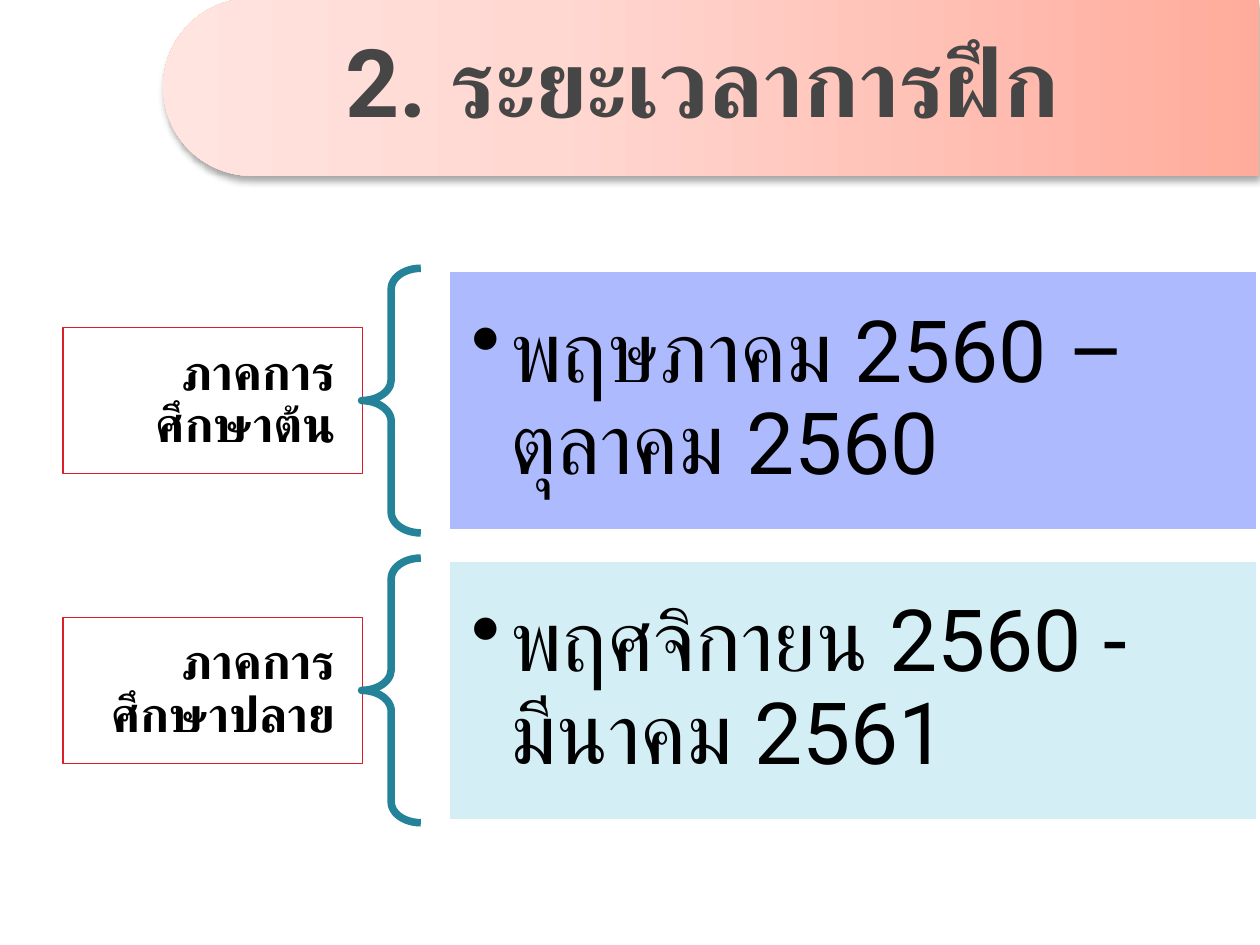
from dataclasses import dataclass

from lxml.etree import SubElement
from pptx import Presentation
from pptx.dml.color import RGBColor
from pptx.enum.shapes import MSO_SHAPE
from pptx.enum.text import MSO_ANCHOR, MSO_AUTO_SIZE, PP_ALIGN
from pptx.oxml import parse_xml
from pptx.oxml.ns import nsdecls, qn
from pptx.util import Inches, Pt


@dataclass(frozen=True)
class Theme:
    font: str = "Roboto"
    title_size: float = 54
    label_size: float = 28
    period_size: float = 49
    thin_line: float = 0.75
    thick_line: float = 4.33
    title: str = "464646"
    text: str = "000000"
    label_line: str = "DA1F28"
    brace: str = "248299"
    period_line: str = "FFFFFF"
    first_term: str = "ADBAFD"
    second_term: str = "D3EEF5"
    banner: tuple = ((0, "FFAC9C"), (65, "FFD8D2"), (100, "FFE4DF"))


class SlideBuilder:
    """Holds the theme and the current page."""

    def __init__(self, page, theme):
        self.page = page
        self.theme = theme

    def shape(self, kind, left, top, width, height, fill=None, line=None, line_width=0.75):
        box = self.page.shapes.add_shape(
            kind, Inches(left), Inches(top), Inches(width), Inches(height))
        box.shadow.inherit = False
        if fill:
            box.fill.solid()
            box.fill.fore_color.rgb = RGBColor.from_string(fill)
        else:
            box.fill.background()
        if line:
            box.line.color.rgb = RGBColor.from_string(line)
            box.line.width = Pt(line_width)
        else:
            box.line.fill.background()
        return box

    def set_text(self, box, text, size, color, bold, align, anchor, insets, bullet=False):
        frame = box.text_frame
        frame.word_wrap = True
        frame.auto_size = MSO_AUTO_SIZE.NONE
        frame.vertical_anchor = anchor
        frame.margin_left = frame.margin_right = Inches(insets[0])
        frame.margin_top = frame.margin_bottom = Inches(insets[1])
        para = frame.paragraphs[0]
        para.text = text
        para.alignment = align
        if bullet:
            settings = para._p.get_or_add_pPr()
            settings.set("marL", str(Inches(0.31)))
            settings.set("indent", str(Inches(-0.31)))
            SubElement(settings, qn("a:buChar")).set("char", "•")
        font = para.font
        font.name = self.theme.font
        font.size = Pt(size)
        font.bold = bold
        font.color.rgb = RGBColor.from_string(color)
        return para

    def banner(self):
        # A tall shape turned on its side, so its rounded end points left
        box = self.shape(MSO_SHAPE.ROUND_2_SAME_RECTANGLE, 4.94, -3.66, 1.41, 8.7)
        box.rotation = 270
        box.adjustments[0] = 0.5
        box.adjustments[1] = 0
        stops = "".join(
            f'<a:gs pos="{position * 1000}"><a:srgbClr val="{color}"/></a:gs>'
            for position, color in self.theme.banner)
        properties = box._element.spPr
        properties.replace(properties.find(qn("a:noFill")), parse_xml(
            f'<a:gradFill {nsdecls("a")} rotWithShape="1"><a:gsLst>{stops}</a:gsLst>'
            '<a:lin ang="16200000" scaled="0"/></a:gradFill>'))
        properties.replace(properties.find(qn("a:effectLst")), parse_xml(
            f'<a:effectLst {nsdecls("a")}><a:outerShdw blurRad="{Pt(4)}" dist="{Pt(3)}" '
            'dir="5400000" rotWithShape="0"><a:srgbClr val="000000">'
            '<a:alpha val="35000"/></a:srgbClr></a:outerShdw></a:effectLst>'))
        # Send behind the title
        self.page.shapes._spTree.insert(2, box._element)

    def title(self, text):
        box = self.page.shapes.title
        box.left, box.top = Inches(2.64), Inches(0.13)
        box.width, box.height = Inches(7.36), Inches(1.1)
        self.set_text(box, text, self.theme.title_size, self.theme.title, True,
                      PP_ALIGN.LEFT, MSO_ANCHOR.TOP, (0.1, 0.05))

    def label(self, text, top):
        box = self.shape(MSO_SHAPE.RECTANGLE, 0.5, top, 2.38, 1.16,
                         line=self.theme.label_line, line_width=self.theme.thin_line)
        para = self.set_text(box, text, self.theme.label_size, self.theme.text, True,
                             PP_ALIGN.RIGHT, MSO_ANCHOR.MIDDLE, (0.22, 0.08))
        para.line_spacing = 0.9

    def brace(self, top, height):
        box = self.shape(MSO_SHAPE.LEFT_BRACE, 2.87, top, 0.47, height,
                         line=self.theme.brace, line_width=self.theme.thick_line)
        box.adjustments[0] = 0.35
        box.adjustments[1] = 0.5

    def period(self, text, top, height, fill):
        box = self.shape(MSO_SHAPE.RECTANGLE, 3.54, top, 6.46, height, fill,
                         self.theme.period_line, self.theme.thick_line)
        para = self.set_text(box, text, self.theme.period_size, self.theme.text, False,
                             PP_ALIGN.LEFT, MSO_ANCHOR.MIDDLE, (0.2, 0.2), bullet=True)
        para.line_spacing = 0.9


def main():
    deck = Presentation()
    deck.slide_width, deck.slide_height = Inches(10), Inches(7.5)
    theme = Theme()
    builder = SlideBuilder(deck.slides.add_slide(deck.slide_layouts[5]), theme)

    # Heading
    builder.banner()
    builder.title("2. ระยะเวลาการฝึก")

    # One row per term: label, brace, training period
    terms = (
        ("ภาคการศึกษาต้น", "พฤษภาคม 2560 – ตุลาคม 2560", theme.first_term),
        ("ภาคการศึกษาปลาย", "พฤศจิกายน 2560 - มีนาคม 2561", theme.second_term),
    )
    row_height, row_gap = 2.1, 0.2
    for index, (name, months, fill) in enumerate(terms):
        top = 2.13 + index * (row_height + row_gap)
        builder.label(name, top + 0.47)
        builder.brace(top, row_height)
        builder.period(months, top, row_height, fill)

    deck.save("out.pptx")


if __name__ == "__main__":
    main()
